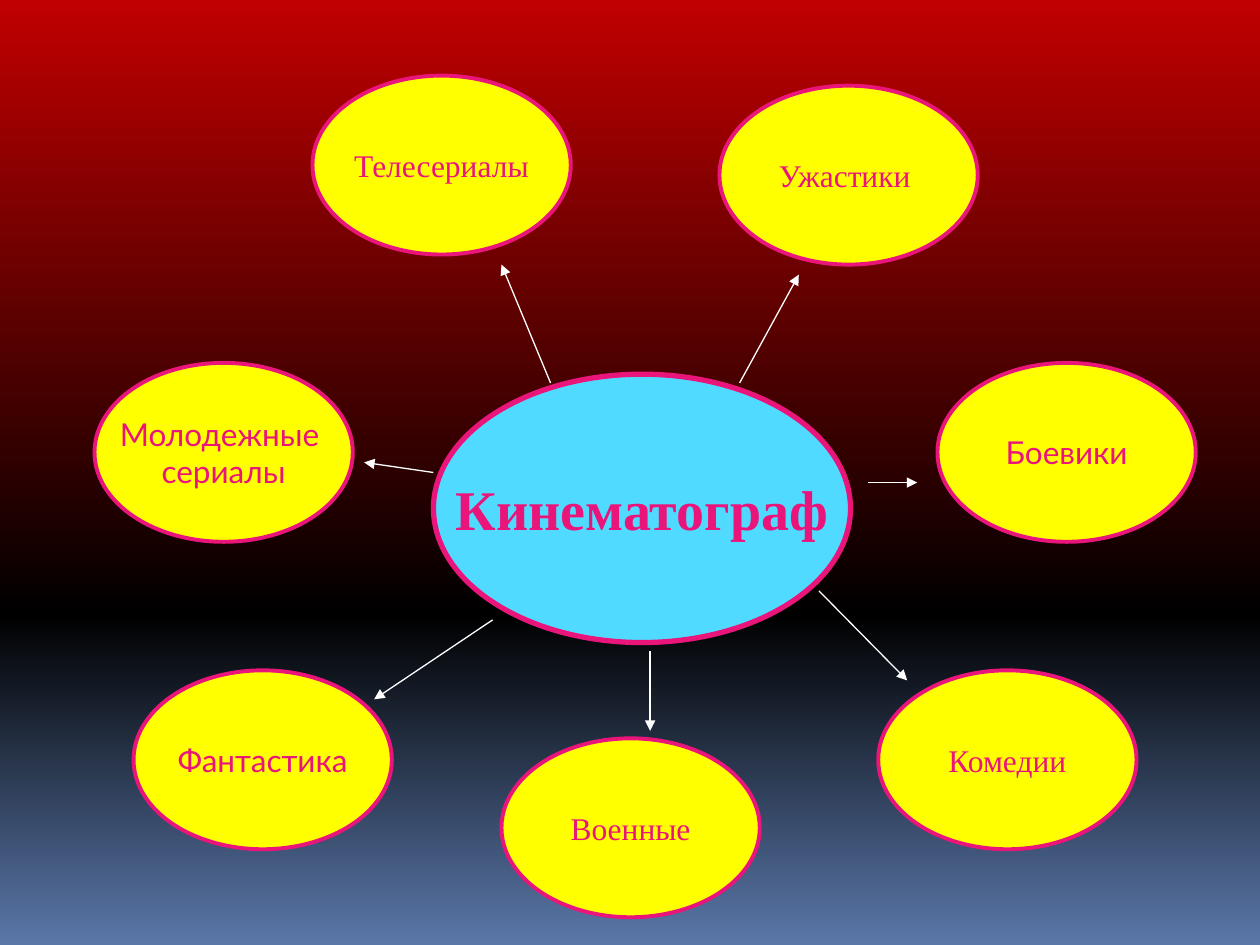
from copy import deepcopy
from typing import NamedTuple

from pptx import Presentation
from pptx import dml, util as u
from pptx.dml import color
from pptx.enum import shapes, text
from pptx.oxml import ns, xmlchemy

SERIF, SANS = "Times New Roman", "Lato"
PINK, YELLOW, BLUE, WHITE = "EA157A", "FFFF00", "51DAFF", "FFFFFF"
GENRE_WIDTH, GENRE_HEIGHT = 2.05, 1.42


class Bubble(NamedTuple):
    label: str
    left: float
    top: float
    font: str = SERIF
    width: float = GENRE_WIDTH
    height: float = GENRE_HEIGHT
    fill: str = YELLOW
    outline: float = 2.25
    size: int = 18
    bold: bool = False


class Arrow(NamedTuple):
    start: tuple[float, float]
    end: tuple[float, float]


CENTRE = Bubble("Кинематограф", 3.44, 2.97, SERIF, 3.31, 2.13, BLUE, 3, 32, True)
GENRES = [
    Bubble(" Телесериалы ", 2.48, 0.6),
    Bubble("Ужастики ", 5.71, 0.68),
    Bubble("Боевики", 7.44, 2.88, SANS),
    Bubble("Комедии", 6.97, 5.32),
    Bubble("Военные", 3.98, 5.86),
    Bubble("Фантастика", 1.06, 5.32, SANS),
    Bubble("Молодежные \nсериалы", 0.75, 2.88, SANS),
]
ARROWS = [
    Arrow((4.37, 3.04), (3.98, 2.1)),
    Arrow((5.87, 3.04), (6.34, 2.18)),
    Arrow((6.89, 3.83), (7.28, 3.83)),
    Arrow((6.5, 4.69), (7.2, 5.4)),
    Arrow((5.16, 5.17), (5.16, 5.8)),
    Arrow((3.91, 4.92), (2.97, 5.55)),
    Arrow((3.44, 3.75), (2.89, 3.67)),
]
BACKGROUND = [(0, "C00000"), (0.65, "000000"), (1, "5A77A9")]


def paint(target, value: str) -> None:
    """Give a colour format a hex colour."""
    target.rgb = color.RGBColor.from_string(value)


def draw_background(slide) -> None:
    fill = slide.background.fill
    fill.gradient()
    fill.gradient_angle = 270  # counter-clockwise: runs top to bottom
    stop_list = next(slide.element.iter(ns.qn("a:gsLst")))
    stop_list.append(deepcopy(stop_list[-1]))
    for stop, (position, value) in zip(fill.gradient_stops, BACKGROUND):
        stop.position = position
        paint(stop.color, value)


def draw_bubble(slide, bubble: Bubble) -> None:
    shape = slide.shapes.add_shape(
        shapes.MSO_SHAPE.OVAL, u.Inches(bubble.left), u.Inches(bubble.top),
        u.Inches(bubble.width), u.Inches(bubble.height))
    shape.shadow.inherit = False
    shape.fill.solid()
    paint(shape.fill.fore_color, bubble.fill)
    paint(shape.line.color, PINK)
    shape.line.width = u.Pt(bubble.outline)

    frame = shape.text_frame
    frame.text = bubble.label
    frame.word_wrap = False
    frame.vertical_anchor = text.MSO_ANCHOR.MIDDLE
    for paragraph in frame.paragraphs:
        paragraph.alignment = text.PP_ALIGN.CENTER
        for run in paragraph.runs:
            run.font.name = bubble.font
            run.font.size = u.Pt(bubble.size)
            run.font.bold = bubble.bold
            paint(run.font.color, PINK)


def draw_arrow(slide, arrow: Arrow) -> None:
    points = [u.Inches(value) for value in arrow.start + arrow.end]
    connector = slide.shapes.add_connector(shapes.MSO_CONNECTOR.STRAIGHT, *points)
    paint(connector.line.color, WHITE)
    connector.line.width = u.Pt(0.75)
    head = xmlchemy.OxmlElement("a:tailEnd")
    head.set("type", "triangle")
    connector.line._get_or_add_ln().append(head)
    connector.element.spPr.append(xmlchemy.OxmlElement("a:effectLst"))


def main() -> None:
    presentation = Presentation()
    presentation.slide_width = u.Inches(10)
    presentation.slide_height = u.Inches(7.5)
    slide = presentation.slides.add_slide(presentation.slide_layouts[6])

    draw_background(slide)
    # Topic in the middle, genres around it
    for bubble in [CENTRE, *GENRES]:
        draw_bubble(slide, bubble)
    # Arrows from the topic to each genre
    for arrow in ARROWS:
        draw_arrow(slide, arrow)

    presentation.save("out.pptx")


if __name__ == "__main__":
    main()
